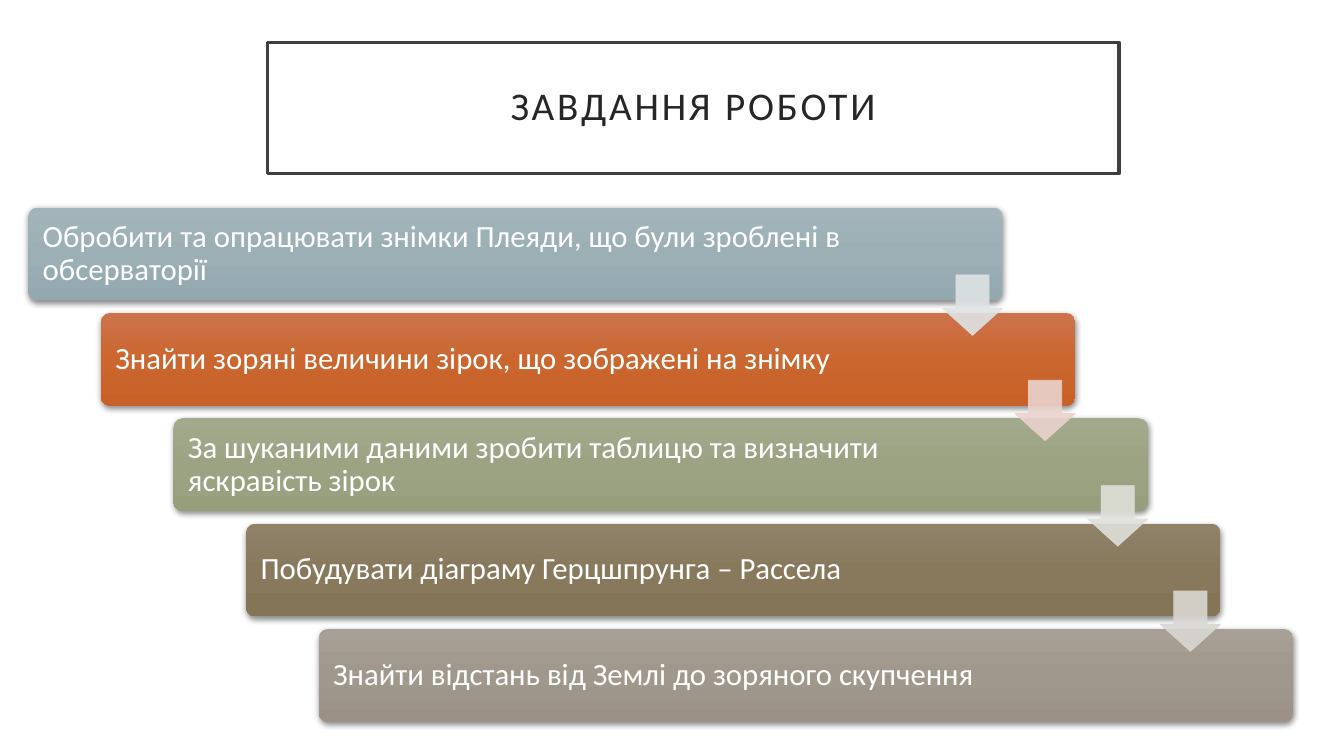
from copy import deepcopy

from pptx import Presentation
from pptx.dml.color import RGBColor
from pptx.enum.shapes import MSO_SHAPE as Preset
from pptx.enum.text import MSO_ANCHOR as Anchor, PP_ALIGN as Align
from pptx.oxml.ns import qn
from pptx.oxml.xmlchemy import OxmlElement
from pptx.util import Cm, Pt

TITLE = "ЗАВДАННЯ РОБОТИ"

# Task, its three gradient colours, colour of the arrow to the next task
TASKS = [
    ("Обробити та опрацювати знімки Плеяди, що були зроблені в обсерваторії",
     ("A3B5BB", "9BAFB5", "93A9AF"), "DEE3E5"),
    ("Знайти зоряні величини зірок, що зображені на знімку",
     ("CC734B", "CB662F", "C86128"), "EBD3CE"),
    ("За шуканими даними зробити таблицю та визначити яскравість зірок",
     ("A3A98C", "9CA383", "979E7C"), "DEE0D9"),
    ("Побудувати діаграму Герцшпрунга – Рассела",
     ("8F8269", "88795C", "847557"), "D9D7D2"),
    ("Знайти відстань від Землі до зоряного скупчення",
     ("A79F95", "A0988C", "9B9285"), None),
]

COLORS = {"paper": "FFFFFF", "frame": "404040", "title": "262626",
          "text": "FFFFFF", "shadow": "000000"}
FONT = "Calibri"

# Staircase geometry in centimetres
LEFT, TOP = 0.71, 5.23
BAR_WIDTH, BAR_HEIGHT = 24.56, 2.34
STEP_X, STEP_Y = 1.83, 2.655
ARROW_SIZE, ARROW_DROP = 1.52, 1.7


def rgb(value):
    return RGBColor.from_string(value)


def add_element(parent, tag, **attributes):
    child = OxmlElement(tag)
    for name, value in attributes.items():
        child.set(name, str(value))
    parent.append(child)
    return child


def set_margins(frame, left, top, right, bottom):
    frame.margin_left, frame.margin_top = Cm(left), Cm(top)
    frame.margin_right, frame.margin_bottom = Cm(right), Cm(bottom)


def write(frame, text, size, color, align):
    frame.text = text
    frame.word_wrap = True
    frame.vertical_anchor = Anchor.MIDDLE
    para = frame.paragraphs[0]
    para.alignment = align
    para.line_spacing = 0.9
    para.font.name, para.font.size = FONT, Pt(size)
    para.font.bold = False
    para.font.color.rgb = rgb(color)
    return para


def fill_gradient(shape, colors):
    shape.fill.gradient()
    shape.fill.gradient_angle = 270
    stop_list = shape._element.spPr.find(".//" + qn("a:gsLst"))
    stop_list.append(deepcopy(stop_list[0]))
    for stop, color, position in zip(shape.fill.gradient_stops, colors, (0, 0.5, 1)):
        stop.color.rgb = rgb(color)
        stop.position = position


def add_soft_shadow(shape):
    shape.shadow.inherit = False
    effects = shape._element.spPr.find(qn("a:effectLst"))
    shadow = add_element(effects, "a:outerShdw", blurRad=Pt(4.4), dist=Pt(1.2),
                         dir=90 * 60000, rotWithShape=0)
    color = add_element(shadow, "a:srgbClr", val=COLORS["shadow"])
    add_element(color, "a:alpha", val=45000)


def add_bar(page, left, top, text, colors):
    bar = page.shapes.add_shape(Preset.ROUNDED_RECTANGLE, Cm(left), Cm(top),
                                Cm(BAR_WIDTH), Cm(BAR_HEIGHT))
    bar.adjustments[0] = 0.1
    fill_gradient(bar, colors)
    bar.line.fill.background()
    add_soft_shadow(bar)
    set_margins(bar.text_frame, 0.3, 0.3, 3.6, 0.3)
    write(bar.text_frame, text, 22, COLORS["text"], Align.LEFT)


def add_arrow(page, left, top, color):
    arrow = page.shapes.add_shape(Preset.DOWN_ARROW, Cm(left), Cm(top),
                                  Cm(ARROW_SIZE), Cm(ARROW_SIZE))
    arrow.adjustments[0], arrow.adjustments[1] = 0.55, 0.45
    arrow.shadow.inherit = False
    arrow.fill.solid()
    arrow.fill.fore_color.rgb = rgb(color)
    arrow.line.color.rgb = rgb(color)
    arrow.line.width = Pt(0.5)
    for tint in arrow._element.spPr.iter(qn("a:srgbClr")):
        add_element(tint, "a:alpha", val=90000)


def main():
    deck = Presentation()
    deck.slide_width, deck.slide_height = Cm(33.87), Cm(19.05)
    page = deck.slides.add_slide(deck.slide_layouts[5])

    # Framed title
    title = page.shapes.title
    title.left, title.top = Cm(6.74), Cm(1.07)
    title.width, title.height = Cm(21.46), Cm(3.3)
    title.fill.solid()
    title.fill.fore_color.rgb = rgb(COLORS["paper"])
    title.line.color.rgb = rgb(COLORS["frame"])
    title.line.width = Pt(2.5)
    set_margins(title.text_frame, 0.5, 0.5, 0.5, 0.5)
    para = write(title.text_frame, TITLE, 28, COLORS["title"], Align.CENTER)
    para.runs[0].font._element.set("spc", "200")

    # Staircase of tasks
    for index, (text, colors, _) in enumerate(TASKS):
        add_bar(page, LEFT + index * STEP_X, TOP + index * STEP_Y, text, colors)

    # Arrows over the right ends of the bars
    for index, (_, _, color) in enumerate(TASKS[:-1]):
        add_arrow(page, LEFT + BAR_WIDTH - ARROW_SIZE + index * STEP_X,
                  TOP + ARROW_DROP + index * STEP_Y, color)

    deck.save("out.pptx")


if __name__ == "__main__":
    main()
